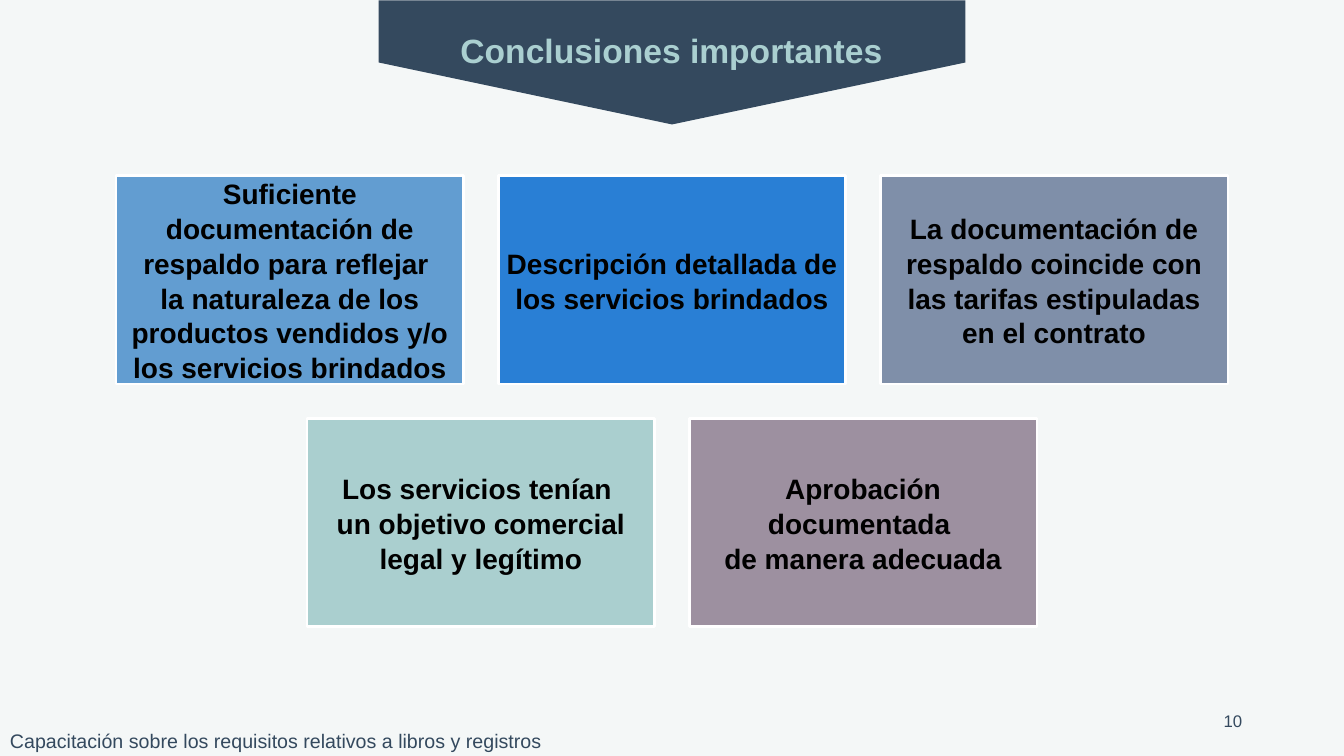
from dataclasses import dataclass

import pptx
import pptx.dml.color
import pptx.enum.shapes
import pptx.enum.text
import pptx.util
from pptx.util import Inches

Align = pptx.enum.text.PP_ALIGN
Anchor = pptx.enum.text.MSO_ANCHOR
Preset = pptx.enum.shapes.MSO_SHAPE

COLORS = {
    "background": "F4F7F7",
    "navy": "34495E",
    "mint": "AACFD0",
    "white": "FFFFFF",
    "black": "000000",
    "sky": "629DD1",
    "blue": "297FD5",
    "slate": "7F8FA9",
    "aqua": "AACFCF",
    "mauve": "9D90A0",
}
SLIDE_WIDTH, SLIDE_HEIGHT = 13.33, 7.5
CARD_WIDTH, CARD_HEIGHT, CARD_GAP = 3.45, 2.07, 0.34
CARDS_TOP = 1.74
CARD_INSET = 0.08


@dataclass(frozen=True)
class Card:
    text: str
    fill: str


@dataclass(frozen=True)
class TextStyle:
    size: float
    color: str
    bold: bool = False
    align: Align = Align.LEFT
    anchor: Anchor = Anchor.TOP
    line_spacing: float = 1.0


CARD_STYLE = TextStyle(20, "black", True, Align.CENTER, Anchor.MIDDLE, 1.04)
TITLE_STYLE = TextStyle(24, "mint", True, Align.CENTER)
FOOTER_STYLE = TextStyle(14, "navy")
NUMBER_STYLE = TextStyle(12, "navy", align=Align.RIGHT, anchor=Anchor.MIDDLE)

CARD_ROWS = [
    [
        Card("Suficiente documentación de respaldo para reflejar \vla naturaleza de los "
             "productos vendidos y/o los servicios brindados", "sky"),
        Card("Descripción detallada de los servicios brindados", "blue"),
        Card("La documentación de respaldo coincide con las tarifas estipuladas "
             "en el contrato", "slate"),
    ],
    [
        Card("Los servicios tenían \vun objetivo comercial legal y legítimo", "aqua"),
        Card("Aprobación documentada \vde manera adecuada", "mauve"),
    ],
]


def rgb(name: str) -> pptx.dml.color.RGBColor:
    return pptx.dml.color.RGBColor.from_string(COLORS[name])


def write(shape, text: str, style: TextStyle) -> None:
    frame = shape.text_frame
    frame.text = text
    frame.word_wrap = True
    frame.auto_size = pptx.enum.text.MSO_AUTO_SIZE.NONE
    frame.vertical_anchor = style.anchor
    for paragraph in frame.paragraphs:
        paragraph.alignment = style.align
        paragraph.line_spacing = style.line_spacing
        for run in paragraph.runs:
            run.font.name = "Arial"
            run.font.size = pptx.util.Pt(style.size)
            run.font.bold = style.bold
            run.font.color.rgb = rgb(style.color)


def add_label(slide, left: float, top: float, width: float, height: float,
              text: str, style: TextStyle) -> None:
    label = slide.shapes.add_textbox(Inches(left), Inches(top), Inches(width), Inches(height))
    write(label, text, style)


def add_banner(slide) -> None:
    banner = slide.shapes.add_shape(
        Preset.PENTAGON, Inches(6.05), Inches(-2.29), Inches(1.23), Inches(5.82))
    banner.rotation = 90
    banner.adjustments[0] = 0.5
    banner.shadow.inherit = False
    banner.fill.solid()
    banner.fill.fore_color.rgb = rgb("navy")
    banner.line.fill.background()


def place_title(slide) -> None:
    title = slide.shapes.title
    title.left, title.top = Inches(2.97), Inches(0.25)
    title.width, title.height = Inches(7.38), Inches(0.5)
    write(title, "Conclusiones importantes", TITLE_STYLE)
    title.element.getparent().append(title.element)


def add_card(slide, left: float, top: float, card: Card) -> None:
    box = slide.shapes.add_shape(
        Preset.RECTANGLE, Inches(left), Inches(top), Inches(CARD_WIDTH), Inches(CARD_HEIGHT))
    box.shadow.inherit = False
    box.fill.solid()
    box.fill.fore_color.rgb = rgb(card.fill)
    box.line.color.rgb = rgb("white")
    box.line.width = pptx.util.Pt(2)
    frame = box.text_frame
    frame.margin_left = frame.margin_right = Inches(CARD_INSET)
    frame.margin_top = frame.margin_bottom = Inches(CARD_INSET)
    write(box, card.text, CARD_STYLE)


def add_card_rows(slide) -> None:
    for row_index, row in enumerate(CARD_ROWS):
        row_width = len(row) * (CARD_WIDTH + CARD_GAP) - CARD_GAP
        row_left = (SLIDE_WIDTH - row_width) / 2
        top = CARDS_TOP + row_index * (CARD_HEIGHT + CARD_GAP)
        for column, card in enumerate(row):
            add_card(slide, row_left + column * (CARD_WIDTH + CARD_GAP), top, card)


def main() -> None:
    deck = pptx.Presentation()
    deck.slide_width, deck.slide_height = Inches(SLIDE_WIDTH), Inches(SLIDE_HEIGHT)
    slide = deck.slides.add_slide(deck.slide_layouts.get_by_name("Title Only"))
    slide.background.fill.solid()
    slide.background.fill.fore_color.rgb = rgb("background")
    add_label(slide, 0, 7.18, 5.89, 0.34,
              "Capacitación sobre los requisitos relativos a libros y registros", FOOTER_STYLE)
    add_banner(slide)
    place_title(slide)
    add_label(slide, 9.42, 6.95, 3, 0.4, "10", NUMBER_STYLE)
    add_card_rows(slide)
    deck.save("out.pptx")


if __name__ == "__main__":
    main()
